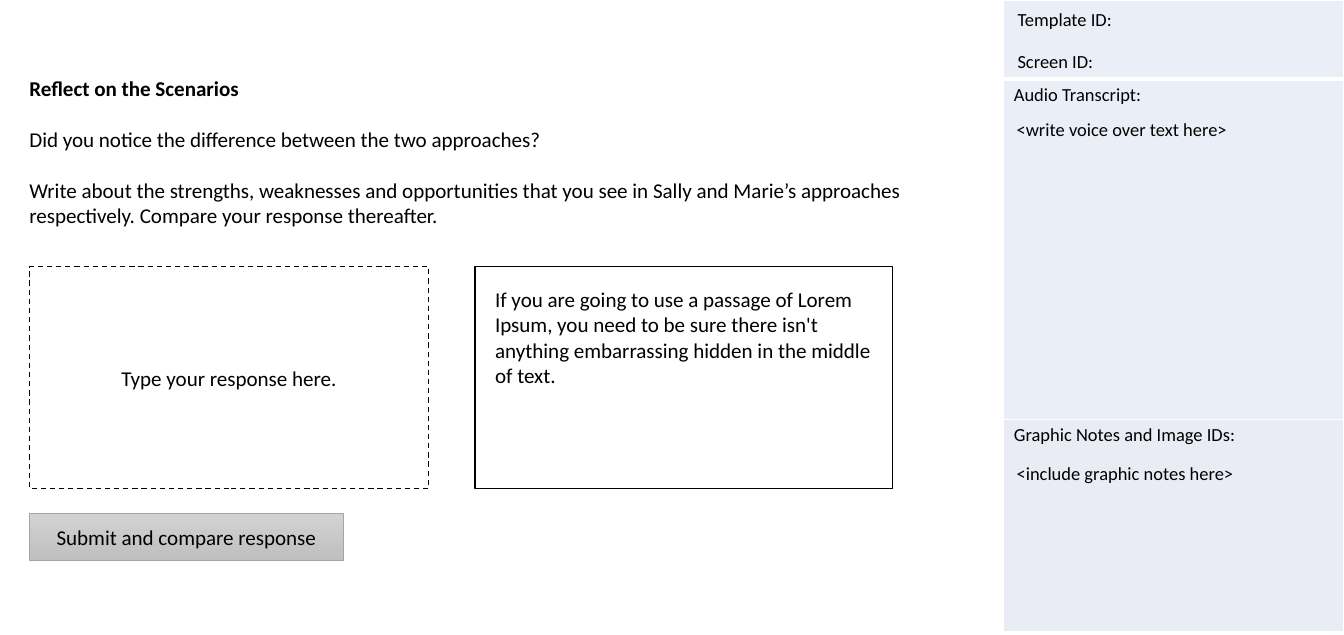
import pptx
import pptx.dml.color
import pptx.enum.dml
import pptx.enum.shapes
import pptx.enum.text
import pptx.oxml
import pptx.oxml.ns
import pptx.util

Inches = pptx.util.Inches
Pt = pptx.util.Pt
Anchor = pptx.enum.text.MSO_ANCHOR
Align = pptx.enum.text.PP_ALIGN


def color(value):
    return pptx.dml.color.RGBColor.from_string(value)


class Storyboard:
    font = "Calibri"
    ink = "000000"
    white = "FFFFFF"
    body_size = 16
    note_size = 14

    def __init__(self, slide):
        self.slide = slide

    def fill_frame(self, frame, paragraphs, size, margins=(0.1, 0.05), bold=False,
                   align=Align.LEFT, anchor=Anchor.TOP, gap=0):
        frame.word_wrap = True
        frame.auto_size = pptx.enum.text.MSO_AUTO_SIZE.NONE
        frame.vertical_anchor = anchor
        frame.margin_left = frame.margin_right = Inches(margins[0])
        frame.margin_top = frame.margin_bottom = Inches(margins[1])
        frame.text = "\n".join(paragraphs)
        for index, paragraph in enumerate(frame.paragraphs):
            paragraph.alignment = align
            paragraph.space_before = Pt(gap if index else 0)
            self.style(paragraph, size, bold)

    def style(self, paragraph, size, bold=False):
        paragraph.font.name = self.font
        paragraph.font.size = Pt(size)
        paragraph.font.bold = bold
        paragraph.font.color.rgb = color(self.ink)

    def title(self, text, left, top, width, height):
        title = self.slide.shapes.title
        title.left, title.top = Inches(left), Inches(top)
        title.width, title.height = Inches(width), Inches(height)
        self.fill_frame(title.text_frame, [text], self.body_size, (0, 0), bold=True)

    def text(self, paragraphs, left, top, width, height, size, **options):
        box = self.slide.shapes.add_textbox(
            Inches(left), Inches(top), Inches(width), Inches(height))
        self.fill_frame(box.text_frame, paragraphs, size, **options)

    def panel(self, text, left, top, width, height, line, line_width, **options):
        shape = self.slide.shapes.add_shape(
            pptx.enum.shapes.MSO_SHAPE.RECTANGLE,
            Inches(left), Inches(top), Inches(width), Inches(height))
        shape.shadow.inherit = False
        shape.fill.background()
        shape.line.color.rgb = color(line)
        shape.line.width = Pt(line_width)
        self.fill_frame(shape.text_frame, [text], self.body_size, **options)
        return shape

    def borders(self, cell, widths):
        properties = cell._tc.get_or_add_tcPr()
        for side, width in zip("LRTB", widths):
            properties.append(pptx.oxml.parse_xml(
                f'<a:ln{side} {pptx.oxml.ns.nsdecls("a")} w="{Pt(width)}">'
                f'<a:solidFill><a:srgbClr val="{self.white}"/></a:solidFill>'
                f'</a:ln{side}>'))

    def sidebar(self, left, width, rows):
        total = sum(row[1] for row in rows)
        table = self.slide.shapes.add_table(
            len(rows), 1, Inches(left), 0, Inches(width), Inches(total)).table
        table.first_row = table.horz_banding = False
        table.columns[0].width = Inches(width)
        for index, (label, height, fill, top_line, bottom_line) in enumerate(rows):
            table.rows[index].height = Inches(height)
            cell = table.cell(index, 0)
            self.borders(cell, (1, 1, top_line, bottom_line))
            cell.fill.solid()
            cell.fill.fore_color.rgb = color(fill)
            cell.margin_left = cell.margin_right = Inches(0.11)
            cell.text = label
            self.style(cell.text_frame.paragraphs[0], self.note_size)


def main():
    presentation = pptx.Presentation()
    presentation.slide_width = Inches(14.17)
    presentation.slide_height = Inches(6.69)
    board = Storyboard(presentation.slides.add_slide(presentation.slide_layouts[5]))

    board.title("Reflect on the Scenarios", 0.31, 0.79, 9.6, 0.3)
    board.sidebar(10.58, 3.59, [
        ("", 0.83, "EAEFF7", 1, 3),
        ("Audio Transcript:", 3.59, "EAEFF7", 3, 1),
        ("Graphic Notes and Image IDs:", 2.23, "E9EBF5", 1, 1),
    ])
    for note, left, top in [
        ("Template ID:", 10.63, 0.04),
        ("Screen ID:", 10.63, 0.48),
        ("<write voice over text here>", 10.62, 1.19),
        ("<include graphic notes here>", 10.62, 4.82),
    ]:
        board.text([note], left, top, 3.54, 0.34, board.note_size)

    board.text([
        "Did you notice the difference between the two approaches?",
        "Write about the strengths, weaknesses and opportunities that you see in "
        "Sally and Marie’s approaches respectively. Compare your response thereafter.",
    ], 0.31, 1.33, 9.6, 1.2, board.body_size, margins=(0, 0), gap=19.5)

    response = board.panel("Type your response here.", 0.31, 2.81, 4.21, 2.34,
                           board.ink, 1, align=Align.CENTER, anchor=Anchor.MIDDLE)
    response.line.dash_style = pptx.enum.dml.MSO_LINE.DASH

    button = board.panel("Submit and compare response", 0.31, 5.41, 3.31, 0.49,
                         "A5A5A5", 0.5, margins=(0, 0.05),
                         align=Align.CENTER, anchor=Anchor.MIDDLE)
    button.fill.gradient()
    button.fill.gradient_angle = 270
    for stop, shade in zip(button.fill.gradient_stops, ("D2D2D2", "C0C0C0")):
        stop.color.rgb = color(shade)

    sample = board.panel(
        "If you are going to use a passage of Lorem Ipsum, you need to be sure there "
        "isn't anything embarrassing hidden in the middle of text.",
        5.01, 2.81, 4.4, 2.34, board.ink, 1, margins=(0.21, 0.21))
    sample.fill.solid()
    sample.fill.fore_color.rgb = color(board.white)

    presentation.save("out.pptx")


if __name__ == "__main__":
    main()
